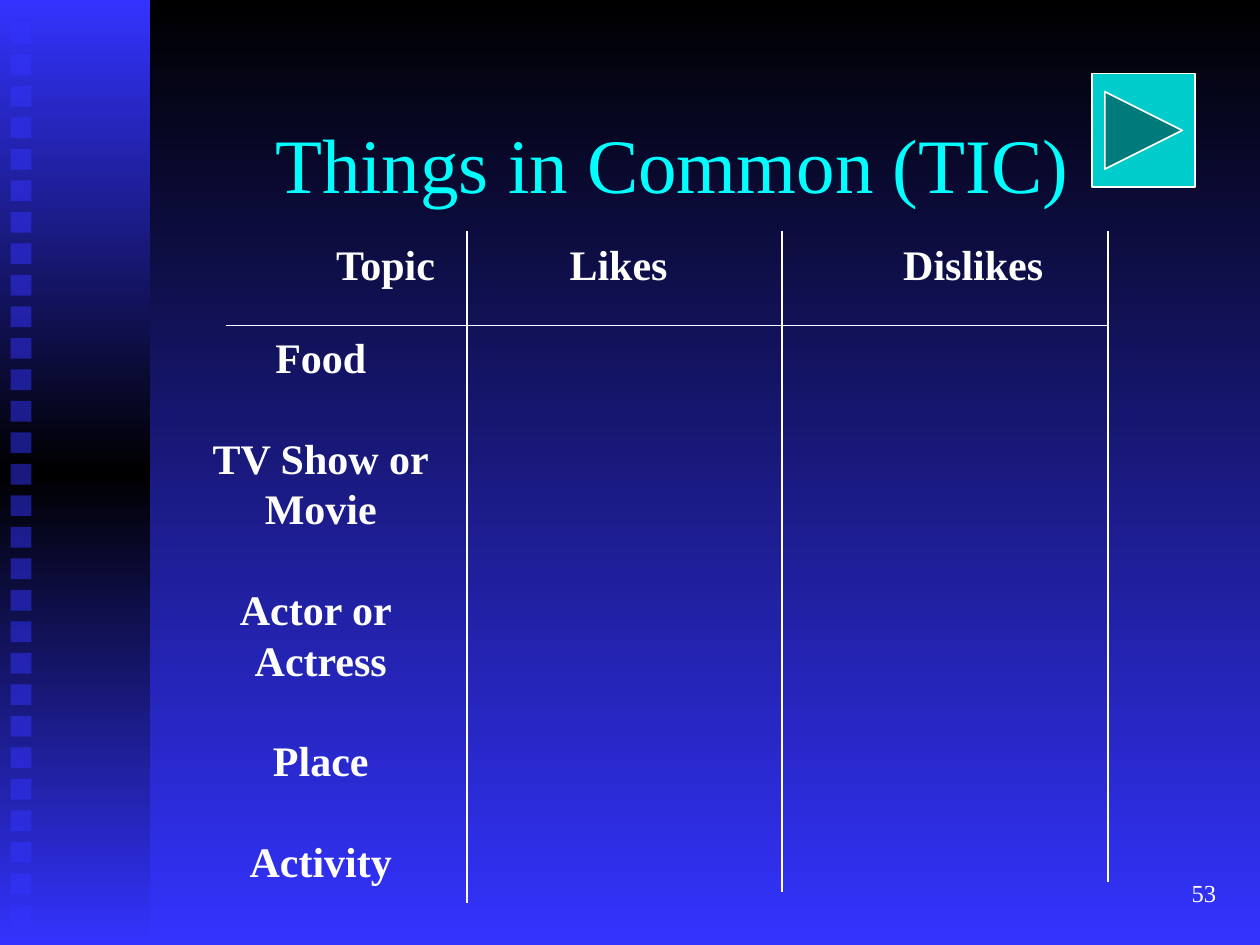
from copy import deepcopy

from lxml import etree
from pptx import Presentation
from pptx import util as u
from pptx.dml.color import RGBColor
from pptx.enum import shapes, text
from pptx.oxml.ns import qn

FONT = "Times New Roman"
BLUE, BLACK, WHITE = "3333FF", "000000", "FFFFFF"
LINE_HEIGHT = 28.8
HEADINGS = [("Topic", 183.6, 73.4), ("Likes", 318.2, 70.6), ("Dislikes", 509, 94.3)]
TOPICS = [["Food"], ["TV Show or", "Movie"], ["Actor or ", "Actress"], ["Place"], ["Activity"]]
COLUMN_LINES = [(267, 516), (447, 510), (633, 504)]


def color(value):
    """Turn a hex string into a colour."""
    return RGBColor.from_string(value)


def fill_gradient(fill, element, colors):
    """Fill from top to bottom with evenly spaced colours."""
    fill.gradient()
    fill.gradient_angle = 270
    stop_list = next(element.iter(qn("a:gsLst")))
    while len(stop_list) < len(colors):
        stop_list.append(deepcopy(stop_list[-1]))
    for index, (stop, value) in enumerate(zip(fill.gradient_stops, colors)):
        stop.color.rgb = color(value)
        stop.position = index / (len(colors) - 1)


def add_box(slide, kind, left, top, width, height):
    """Add a preset shape without shadow or outline."""
    shape = slide.shapes.add_shape(kind, u.Pt(left), u.Pt(top), u.Pt(width), u.Pt(height))
    shape.shadow.inherit = False
    shape.line.fill.background()
    return shape


def add_square(slide, top):
    """Add one half-transparent square to the side band."""
    square = add_box(slide, shapes.MSO_SHAPE.RECTANGLE, 6, top, 12, 12)
    square.fill.solid()
    square.fill.fore_color.rgb = color(BLUE)
    solid = square.fill._xPr.find(qn("a:solidFill"))
    etree.SubElement(solid[0], qn("a:alpha"), val="50000")


def add_side_band(slide):
    """Add the gradient band and its column of squares."""
    band = add_box(slide, shapes.MSO_SHAPE.RECTANGLE, 0, 0, 85.7, 540)
    fill_gradient(band.fill, band._element, [BLUE, BLACK, BLUE])
    for index in range(29):
        add_square(slide, 13 + 18 * index)


def add_line(slide, x1, y1, x2, y2):
    """Add a thin white line."""
    line = slide.shapes.add_connector(
        shapes.MSO_CONNECTOR.STRAIGHT, u.Pt(x1), u.Pt(y1), u.Pt(x2), u.Pt(y2))
    line.line.color.rgb = color(WHITE)
    line.line.width = u.Pt(1)
    etree.SubElement(line._element.spPr, qn("a:effectLst"))


def format_paragraph(paragraph, size, value, align, bold=False):
    """Set the alignment and the font of a paragraph's runs."""
    paragraph.alignment = align
    for run in paragraph.runs:
        run.font.name = FONT
        run.font.size = u.Pt(size)
        run.font.bold = bold
        run.font.color.rgb = color(value)


def add_label(slide, groups, left, top, width, height):
    """Add bold centred text, with one line of space between groups."""
    box = slide.shapes.add_textbox(u.Pt(left), u.Pt(top), u.Pt(width), u.Pt(height))
    frame = box.text_frame
    frame.word_wrap = False
    frame.text = "\n".join(line for group in groups for line in group)
    paragraphs = iter(frame.paragraphs)
    for group_index, group in enumerate(groups):
        for line_index in range(len(group)):
            paragraph = next(paragraphs)
            paragraph.line_spacing = u.Pt(LINE_HEIGHT)
            if group_index and not line_index:
                paragraph.space_before = u.Pt(LINE_HEIGHT)
            format_paragraph(paragraph, 24, WHITE, text.PP_ALIGN.CENTER, True)


def set_title(slide, words):
    """Place and format the title."""
    title = slide.shapes.title
    title.left, title.top, title.width, title.height = map(u.Pt, (150, 48, 612, 90))
    title.text_frame.text = words
    title.text_frame.vertical_anchor = text.MSO_ANCHOR.MIDDLE
    format_paragraph(title.text_frame.paragraphs[0], 44, "00FFFF", text.PP_ALIGN.LEFT)


def add_slide_number(slide, number):
    """Add the number at the bottom right."""
    box = slide.shapes.add_textbox(u.Pt(552), u.Pt(492), u.Pt(150), u.Pt(36))
    frame = box.text_frame
    frame.word_wrap = True
    frame.vertical_anchor = text.MSO_ANCHOR.MIDDLE
    frame.text = number
    format_paragraph(frame.paragraphs[0], 14, WHITE, text.PP_ALIGN.RIGHT)


def add_next_button(slide):
    """Add the forward button."""
    kind = shapes.MSO_SHAPE.ACTION_BUTTON_FORWARD_OR_NEXT
    button = add_box(slide, kind, 624, 42, 59, 65)
    button.fill.solid()
    button.fill.fore_color.rgb = color("00CCCC")
    button.line.color.rgb = color(WHITE)
    button.line.width = u.Pt(1)


def main():
    """Build the slide and save it."""
    presentation = Presentation()
    presentation.slide_width, presentation.slide_height = u.Pt(720), u.Pt(540)
    slide = presentation.slides.add_slide(presentation.slide_layouts[5])
    fill_gradient(slide.background.fill, slide._element, [BLACK, BLUE])
    add_side_band(slide)
    set_title(slide, "Things in Common (TIC)")
    add_slide_number(slide, "53")
    for x, bottom in COLUMN_LINES:
        add_line(slide, x, 132, x, bottom)
    add_line(slide, 129, 186, 633, 186)
    for heading, left, width in HEADINGS:
        add_label(slide, [[heading]], left, 132.5, width, 36)
    add_label(slide, TOPICS, 113.8, 186, 139, 323)
    add_next_button(slide)
    presentation.save("out.pptx")


if __name__ == "__main__":
    main()
